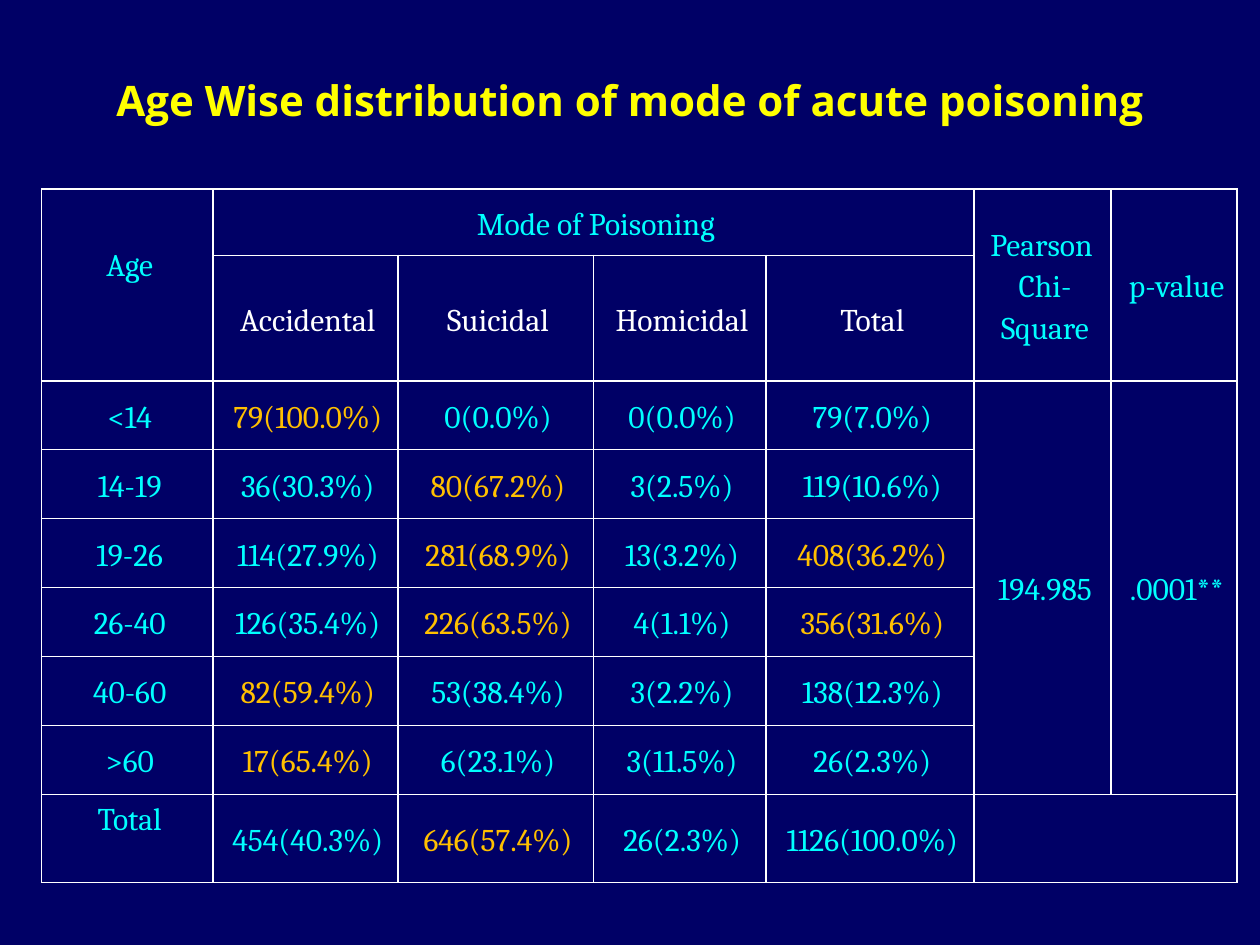
from dataclasses import dataclass
from itertools import product

from lxml.etree import SubElement
from pptx import Presentation
from pptx.dml.color import RGBColor
from pptx.enum.text import MSO_ANCHOR as Anchor, PP_ALIGN as Align
from pptx.oxml import parse_xml
from pptx.oxml.ns import nsdecls, qn
from pptx.util import Cm, Pt


@dataclass(frozen=True)
class Theme:
    background: str = "000066"
    title: str = "FFFF00"
    text: str = "00FFFF"
    subheading: str = "FFFFFF"
    highlight: str = "FFC000"
    border: str = "FFFFFF"
    title_font: str = "Open Sans"
    table_font: str = "Cambria"
    title_size: int = 24
    table_size: int = 18
    border_width: int = 1


theme = Theme()


def add_run(paragraph, text, font_name, size, color, bold=False):
    run = paragraph.add_run()
    run.text = text
    run.font.name = font_name
    run.font.size = Pt(size)
    run.font.bold = bold
    run.font.color.rgb = RGBColor.from_string(color)


def add_borders(cell):
    properties = cell._tc.get_or_add_tcPr()
    for position, side in enumerate(("lnL", "lnR", "lnT", "lnB")):
        line = parse_xml(f"<a:{side} {nsdecls('a')}/>")
        line.set("w", str(Pt(theme.border_width)))
        fill = SubElement(line, qn("a:solidFill"))
        SubElement(fill, qn("a:srgbClr")).set("val", theme.border)
        properties.insert(position, line)


presentation = Presentation()
presentation.slide_width = Cm(25.4)
presentation.slide_height = Cm(19.05)
slide = presentation.slides.add_slide(presentation.slide_layouts[5])
slide.background.fill.solid()
slide.background.fill.fore_color.rgb = RGBColor.from_string(theme.background)

title = slide.shapes.title
title.left, title.top, title.width, title.height = Cm(0), Cm(0.64), Cm(25.4), Cm(2.74)
title.text_frame.vertical_anchor = Anchor.MIDDLE
title_paragraph = title.text_frame.paragraphs[0]
title_paragraph.alignment = Align.CENTER
add_run(title_paragraph, "Age Wise distribution of mode of acute poisoning",
        theme.title_font, theme.title_size, theme.title, bold=True)

rows = [
    ["Age", "Mode of Poisoning", "", "", "", "Pearson \nChi- Square", "p-value"],
    ["", "Accidental", "Suicidal", "Homicidal", "Total", "", ""],
    ["<14", "79(100.0%)", "0(0.0%)", "0(0.0%)", "79(7.0%)", "194.985", ".0001**"],
    ["14-19", "36(30.3%)", "80(67.2%)", "3(2.5%)", "119(10.6%)", "", ""],
    ["19-26", "114(27.9%)", "281(68.9%)", "13(3.2%)", "408(36.2%)", "", ""],
    ["26-40", "126(35.4%)", "226(63.5%)", "4(1.1%)", "356(31.6%)", "", ""],
    ["40-60", "82(59.4%)", "53(38.4%)", "3(2.2%)", "138(12.3%)", "", ""],
    [">60", "17(65.4%)", "6(23.1%)", "3(11.5%)", "26(2.3%)", "", ""],
    ["Total", "454(40.3%)", "646(57.4%)", "26(2.3%)", "1126(100.0%)", "", ""],
]
highlighted = {
    "79(100.0%)", "80(67.2%)", "281(68.9%)", "408(36.2%)", "226(63.5%)",
    "356(31.6%)", "82(59.4%)", "17(65.4%)", "646(57.4%)",
}
column_widths = [3.45, 3.73, 3.94, 3.48, 4.19, 2.77, 2.54]
row_heights = [1.34, 1.65] + [1.39] * 6 + [1.78]
merges = [
    ((0, 0), (1, 0)), ((0, 1), (0, 4)), ((0, 5), (1, 5)), ((0, 6), (1, 6)),
    ((2, 5), (7, 5)), ((2, 6), (7, 6)), ((8, 5), (8, 6)),
]
raised_labels = {(0, 0), (8, 0)}

table = slide.shapes.add_table(
    len(rows), len(column_widths), Cm(0.84), Cm(3.81),
    Cm(sum(column_widths)), Cm(sum(row_heights))).table
table.first_row = False
table.horz_banding = False
for column, width in zip(table.columns, column_widths):
    column.width = Cm(width)
for row, height in zip(table.rows, row_heights):
    row.height = Cm(height)
for start, end in merges:
    table.cell(*start).merge(table.cell(*end))

for row_index, column_index in product(range(len(rows)), range(len(column_widths))):
    cell = table.cell(row_index, column_index)
    text = rows[row_index][column_index]
    cell.margin_left = cell.margin_right = cell.margin_top = cell.margin_bottom = Cm(0)
    if (row_index, column_index) in raised_labels:
        cell.margin_bottom = Cm(0.85)
    cell.vertical_anchor = Anchor.MIDDLE
    cell.fill.background()
    add_borders(cell)
    if not text:
        continue
    color = theme.text
    if row_index == 1:
        color = theme.subheading
    elif text in highlighted:
        color = theme.highlight
    for line_index, line_text in enumerate(text.split("\n")):
        frame = cell.text_frame
        paragraph = frame.add_paragraph() if line_index else frame.paragraphs[0]
        paragraph.alignment = Align.CENTER
        paragraph.line_spacing = 1.15
        paragraph._p.get_or_add_pPr().set("marL", str(Cm(0.1)))
        add_run(paragraph, line_text, theme.table_font, theme.table_size, color)

presentation.save("out.pptx")
